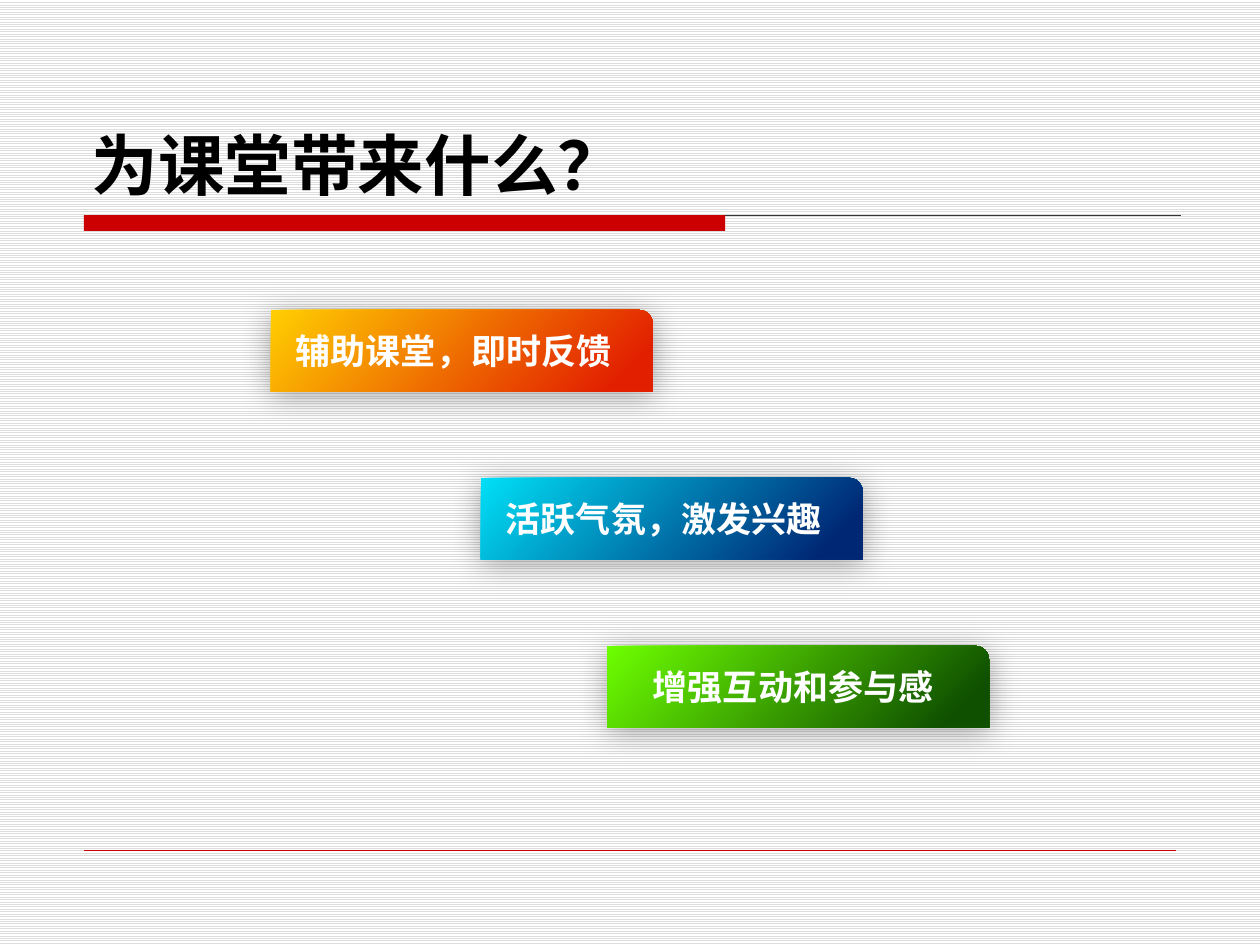
from dataclasses import dataclass

from lxml import etree
from pptx import Presentation
from pptx.dml.color import RGBColor
from pptx.enum.dml import MSO_PATTERN
from pptx.enum.shapes import MSO_CONNECTOR, MSO_SHAPE
from pptx.enum.text import MSO_ANCHOR
from pptx.oxml.ns import qn
from pptx.util import Pt

STRIPES = MSO_PATTERN.LIGHT_HORIZONTAL
STRAIGHT = MSO_CONNECTOR.STRAIGHT
RECTANGLE = MSO_SHAPE.RECTANGLE
ONE_ROUND_CORNER = MSO_SHAPE.ROUND_1_RECTANGLE
TOP, BOTTOM = MSO_ANCHOR.TOP, MSO_ANCHOR.BOTTOM


@dataclass(frozen=True)
class Theme:
    font: str = "DejaVu Sans"
    title_size: int = 38
    label_size: int = 20
    stripe: str = "DDDDDD"
    paper: str = "FFFFFF"
    accent: str = "CC0000"
    rule: str = "333333"
    title: str = "000000"
    label: str = "FFFFFF"
    shadow: str = "000000"
    orange: tuple = ("FFCF01", "E22000")
    blue: tuple = ("00DFF6", "002774")
    green: tuple = ("6EFF01", "0F5000")


THEME = Theme()
BANNER_WIDTH, BANNER_HEIGHT = 218.2, 46.6
BANNER_TOP, BANNER_STEP = 177.1, 96


def rgb(value):
    return RGBColor.from_string(value)


def add_background(slide):
    fill = slide.background.fill
    fill.patterned()
    fill.pattern = STRIPES
    fill.fore_color.rgb = rgb(THEME.stripe)
    fill.back_color.rgb = rgb(THEME.paper)


def add_rule(shapes, left, right, y, color, weight):
    rule = shapes.add_connector(STRAIGHT, Pt(left), Pt(y), Pt(right), Pt(y))
    rule.line.color.rgb = rgb(color)
    rule.line.width = Pt(weight)
    etree.SubElement(rule._element.spPr, qn("a:effectLst"))


def add_bar(shapes, left, top, width, height):
    bar = shapes.add_shape(RECTANGLE, Pt(left), Pt(top), Pt(width), Pt(height))
    bar.shadow.inherit = False
    bar.fill.solid()
    bar.fill.fore_color.rgb = rgb(THEME.accent)
    bar.line.fill.background()


def add_text(shapes, text, left, top, width, height, size, color, anchor=TOP):
    box = shapes.add_textbox(Pt(left), Pt(top), Pt(width), Pt(height))
    frame = box.text_frame
    frame.word_wrap = True
    frame.vertical_anchor = anchor
    paragraph = frame.paragraphs[0]
    paragraph.text = text
    font = paragraph.font
    font.name = THEME.font
    font.size = Pt(size)
    font.bold = True
    font.color.rgb = rgb(color)


def add_soft_shadow(shape):
    shape.shadow.inherit = False
    effects = shape._element.spPr.find(qn("a:effectLst"))
    shadow = etree.SubElement(
        effects, qn("a:outerShdw"), blurRad=str(Pt(17.8)), dist=str(Pt(3)),
        dir=str(87 * 60000), algn="ctr", rotWithShape="0")
    color = etree.SubElement(shadow, qn("a:srgbClr"), val=THEME.shadow)
    etree.SubElement(color, qn("a:alpha"), val="33000")


def add_banner(slide, text, left, top, colors, text_left, text_width):
    shapes = slide.shapes.add_group_shape().shapes
    plate = shapes.add_shape(ONE_ROUND_CORNER, Pt(left), Pt(top),
                             Pt(BANNER_WIDTH), Pt(BANNER_HEIGHT))
    plate.line.fill.background()
    plate.fill.gradient()
    plate.fill.gradient_angle = 315  # counter-clockwise: towards lower right
    for stop, position, color in zip(plate.fill.gradient_stops, (0, 0.9), colors):
        stop.position = position
        stop.color.rgb = rgb(color)
    add_soft_shadow(plate)
    add_text(shapes, text, text_left, top + 7.6, text_width, 31,
             THEME.label_size, THEME.label)


def main():
    presentation = Presentation()
    presentation.slide_width, presentation.slide_height = Pt(720), Pt(540)
    slide = presentation.slides.add_slide(presentation.slide_layouts[6])
    add_background(slide)

    # Heading rule with its thick bar, and footer rule
    add_rule(slide.shapes, 48, 674.6, 123, THEME.rule, 0.75)
    add_bar(slide.shapes, 48, 123, 366.4, 9)
    add_rule(slide.shapes, 48, 672, 486, THEME.accent, 0.25)

    # Title
    add_text(slide.shapes, "为课堂带来什么？", 45.4, 24, 630, 96,
             THEME.title_size, THEME.title, BOTTOM)

    # Banners stepping down to the right
    banners = [
        ("辅助课堂，即时反馈", 154.8, THEME.orange, 162, 222),
        ("活跃气氛，激发兴趣", 274.8, THEME.blue, 282, 198),
        ("增强互动和参与感", 347, THEME.green, 366, 180),
    ]
    for row, (text, left, colors, text_left, text_width) in enumerate(banners):
        add_banner(slide, text, left, BANNER_TOP + row * BANNER_STEP,
                   colors, text_left, text_width)

    presentation.save("out.pptx")


if __name__ == "__main__":
    main()
